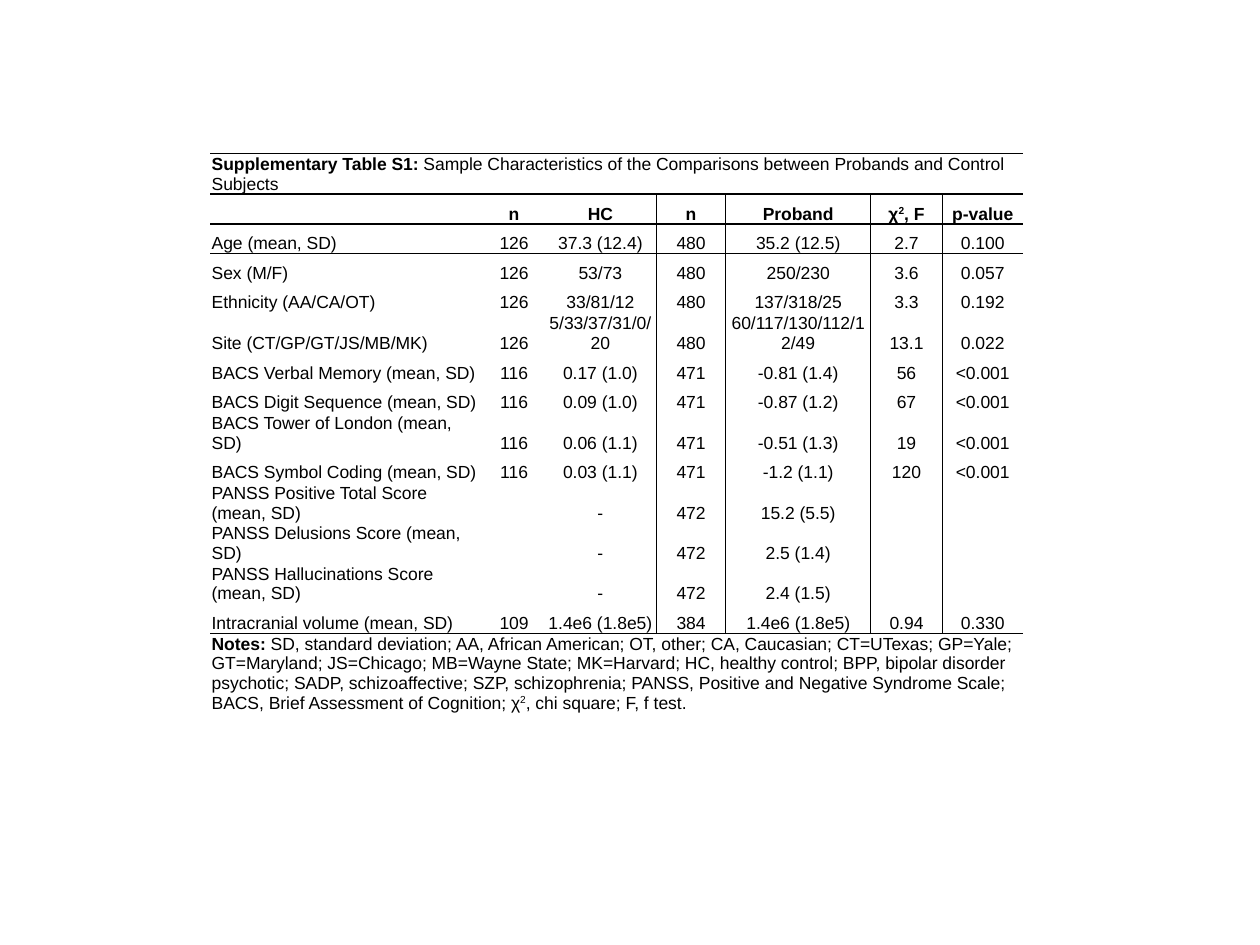
from lxml import etree
from pptx import Presentation
from pptx.dml.color import RGBColor
from pptx.enum.text import MSO_ANCHOR, PP_ALIGN
from pptx.oxml.ns import qn
from pptx.util import Inches, Pt

BOTTOM = MSO_ANCHOR.BOTTOM
LEFT, CENTER = PP_ALIGN.LEFT, PP_ALIGN.CENTER

THEME = {"font": "Arial", "size": 10, "ink": "000000", "line": 1}
PLAIN_STYLE = "{2D5ABB26-0587-4C30-8999-92F81FD0307C}"

# Rich text is a list of (text, marks): b = bold, s = superscript
TITLE = [
    ("Supplementary Table S1: ", "b"),
    ("Sample Characteristics of the Comparisons between Probands and "
     "Control Subjects", ""),
]
HEAD = ["", "n", "HC", "n", "Proband",
        [("χ", "b"), ("2", "bs"), (", F", "b")], "p-value"]
BODY = [
    ("Age (mean, SD)", "126", "37.3 (12.4)", "480", "35.2 (12.5)", "2.7", "0.100"),
    ("Sex (M/F)", "126", "53/73", "480", "250/230", "3.6", "0.057"),
    ("Ethnicity (AA/CA/OT)", "126", "33/81/12", "480", "137/318/25", "3.3", "0.192"),
    ("Site (CT/GP/GT/JS/MB/MK)", "126", "5/33/37/31/0/20", "480",
     "60/117/130/112/12/49", "13.1", "0.022"),
    ("BACS Verbal Memory (mean, SD)", "116", "0.17 (1.0)", "471", "-0.81 (1.4)",
     "56", "<0.001"),
    ("BACS Digit Sequence (mean, SD)", "116", "0.09 (1.0)", "471", "-0.87 (1.2)",
     "67", "<0.001"),
    ("BACS Tower of London (mean, SD)", "116", "0.06 (1.1)", "471", "-0.51 (1.3)",
     "19", "<0.001"),
    ("BACS Symbol Coding (mean, SD)", "116", "0.03 (1.1)", "471", "-1.2 (1.1)",
     "120", "<0.001"),
    ("PANSS Positive Total Score (mean, SD)", "", "-", "472", "15.2 (5.5)", "", ""),
    ("PANSS Delusions Score (mean, SD)", "", "-", "472", "2.5 (1.4)", "", ""),
    ("PANSS Hallucinations Score (mean, SD)", "", "-", "472", "2.4 (1.5)", "", ""),
    ("Intracranial volume (mean, SD)", "109", "1.4e6 (1.8e5)", "384",
     "1.4e6 (1.8e5)", "0.94", "0.330"),
]
NOTES = [
    ("Notes:", "b"),
    (" SD, standard deviation; AA, African American; OT, other; CA, Caucasian; "
     "CT=UTexas; GP=Yale; GT=Maryland; JS=Chicago; MB=Wayne State; MK=Harvard; "
     "HC, healthy control; BPP, bipolar disorder psychotic; SADP, "
     "schizoaffective; SZP, schizophrenia; PANSS, Positive and Negative "
     "Syndrome Scale; BACS, Brief Assessment of Cognition; χ", ""),
    ("2", "s"),
    (", chi square; F, f test.", ""),
]

ROWS = [[TITLE], HEAD, *BODY, [NOTES]]
LAST = len(ROWS) - 1
WIDTHS = [2.17, 0.48, 0.89, 0.55, 1.15, 0.57, 0.64]
LEFT_AT, TOP_AT = 1.67, 1.22
GRID_H, NOTES_H = 3.3, 0.58
RULES = {0, 1, 2, LAST}   # rows with a line above
SPLITS = {3, 5}           # columns with a line to their left
CELL = {"vertical_anchor": BOTTOM, "margin_left": Inches(0.01),
        "margin_right": Inches(0.01), "margin_top": Inches(0.01),
        "margin_bottom": 0}


def set_all(item, values):
    for name, value in values.items():
        setattr(item, name, value)


def write(cell, text, bold, align):
    para = cell.text_frame.paragraphs[0]
    para.alignment = align
    runs = [(text, "b" if bold else "")] if isinstance(text, str) else text
    for words, marks in runs:
        if not words:
            continue
        run = para.add_run()
        run.text = words
        set_all(run.font, {"name": THEME["font"], "size": Pt(THEME["size"]),
                           "bold": "b" in marks})
        run.font.color.rgb = RGBColor.from_string(THEME["ink"])
        if "s" in marks:
            run._r.get_or_add_rPr().set("baseline", "30000")
    # Keeps blank cells from growing to the default text size
    etree.SubElement(para._p, qn("a:endParaRPr"), sz=str(THEME["size"] * 100))


def border(cell, row, col):
    inner = 0 < row < LAST
    sides = {"L": inner and col in SPLITS, "R": inner and col + 1 in SPLITS,
             "T": row in RULES, "B": row + 1 in RULES}
    props = cell._tc.get_or_add_tcPr()
    for side, shown in sides.items():
        if shown:
            line = etree.SubElement(props, qn("a:ln" + side),
                                    w=str(Pt(THEME["line"])))
            fill = etree.SubElement(line, qn("a:solidFill"))
            etree.SubElement(fill, qn("a:srgbClr"), val=THEME["ink"])


def main():
    deck = Presentation()
    deck.slide_width, deck.slide_height = Inches(10), Inches(7.5)
    slide = deck.slides.add_slide(deck.slide_layouts[6])
    frame = slide.shapes.add_table(
        len(ROWS), len(WIDTHS), Inches(LEFT_AT), Inches(TOP_AT),
        Inches(sum(WIDTHS)), Inches(GRID_H + NOTES_H))
    table = frame.table
    set_all(table, {"first_row": False, "horz_banding": False})
    table._tbl.tblPr.find(qn("a:tableStyleId")).text = PLAIN_STYLE

    for col, width in enumerate(WIDTHS):
        table.columns[col].width = Inches(width)
    for r, texts in enumerate(ROWS):
        table.rows[r].height = Inches(NOTES_H if r == LAST else GRID_H / LAST)
        for c in range(len(WIDTHS)):
            cell = table.cell(r, c)
            set_all(cell, CELL)
            border(cell, r, c)
            cell.fill.background()
            write(cell, texts[c] if c < len(texts) else "", r == 1,
                  CENTER if c else LEFT)
        if len(texts) == 1:
            table.cell(r, 0).merge(table.cell(r, len(WIDTHS) - 1))

    deck.save("out.pptx")


if __name__ == "__main__":
    main()
